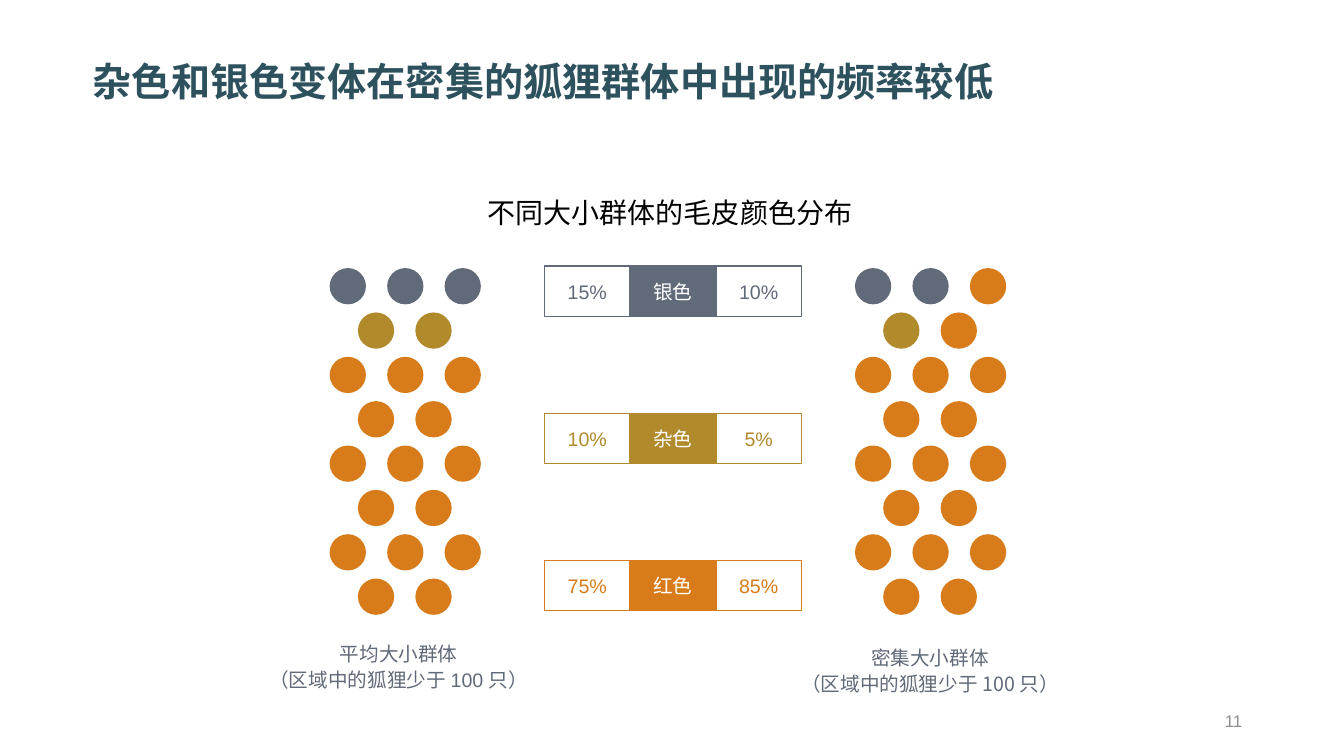
import pptx
import pptx.util
import pptx.dml.color
import pptx.enum.shapes
import pptx.enum.text

# Content
TITLE = "杂色和银色变体在密集的狐狸群体中出现的频率较低"
HEAD = "不同大小群体的毛皮颜色分布"
NUMBER = "11"
BARS = [  # coat, average share, label, dense share
    ("silver", "15%", "银色", "10%"),
    ("mixed", "10%", "杂色", "5%"),
    ("red", "75%", "红色", "85%"),
]
ROWS = (3, 2) * 4  # dots in each row
PACKS = [  # left edge, coats of the first dots (the rest are red)
    (327, ["silver"] * 3 + ["mixed"] * 2),
    (848, ["silver"] * 2 + ["red", "mixed"]),
]
SANS, HAN = "Arial", "Noto Sans CJK SC"
NOTE = "（区域中的狐狸少于 100 只）"
NOTES = [  # text, box, font, anchor, left inset
    (["平均大小群体", NOTE], (224, 639, 353, 60), SANS, "TOP", 0),
    (["密集大小群体", NOTE], (746, 638, 353, 60), HAN, "MIDDLE", 10),
]
COLORS = {
    "silver": "616A78", "mixed": "B18A2C", "red": "D87C1B", "title": "2E515E",
    "black": "000000", "white": "FFFFFF", "gray": "8C8C8C",
}
SCALE = 9144  # EMU in one px, 100 px to the inch
KINDS = pptx.enum.shapes.MSO_SHAPE


def px(*sizes):
    return [pptx.util.Emu(size * SCALE) for size in sizes]


def rgb(name):
    return pptx.dml.color.RGBColor.from_string(COLORS[name])


def move(shape, box):
    shape.left, shape.top, shape.width, shape.height = px(*box)


def write(shape, lines, size=14, color="black", font=SANS, bold=False,
          align="CENTER", anchor="TOP", inset=(10, 5, 10, 5), lead=None, gap=0):
    frame = shape.text_frame
    frame.text = "\n".join(lines)
    frame.word_wrap = True
    frame.auto_size = pptx.enum.text.MSO_AUTO_SIZE.NONE
    frame.vertical_anchor = getattr(pptx.enum.text.MSO_ANCHOR, anchor)
    (frame.margin_left, frame.margin_top,
     frame.margin_right, frame.margin_bottom) = px(*inset)
    for para in frame.paragraphs:
        para.alignment = getattr(pptx.enum.text.PP_ALIGN, align)
        para.space_before = pptx.util.Pt(gap)
        if lead:
            para.line_spacing = lead
        for run in para.runs:
            run.font.size = pptx.util.Pt(size)
            run.font.bold = bold
            run.font.name = font
            run.font.color.rgb = rgb(color)
            east = run.font._element.makeelement(pptx.oxml.ns.qn("a:ea"), {"typeface": HAN})
            run.font._element.append(east)


def draw(group, kind, box, fill=None, line=None):
    shape = group.shapes.add_shape(kind, *px(*box))
    shape.shadow.inherit = False
    if fill:
        shape.fill.solid()
        shape.fill.fore_color.rgb = rgb(fill)
    else:
        shape.fill.background()
    if line:
        shape.line.color.rgb = rgb(line)
        shape.line.width = pptx.util.Pt(1)
    else:
        shape.line.fill.background()
    return shape


def main():
    deck = pptx.Presentation()
    deck.slide_width, deck.slide_height = px(1333, 750)
    slide = deck.slides.add_slide(deck.slide_layouts[3])
    title, *bodies = slide.placeholders

    # Title and heading
    move(title, (92, 62, 1152, 96))
    write(title, [TITLE], size=28, color="title", font=HAN, bold=True,
          align="LEFT", inset=(0, 0, 0, 0), lead=0.9)
    head = slide.shapes.add_textbox(*px(292, 189, 745, 44))
    write(head, [HEAD], size=20)

    # Dot packs: rows of three and two, the short rows shifted by half a step
    for left, first in PACKS:
        group = slide.shapes.add_group_shape()
        coats = iter(first + ["red"] * (sum(ROWS) - len(first)))
        for row, count in enumerate(ROWS):
            for col in range(count):
                x = left + 57 * col + 28 * (row % 2)
                draw(group, KINDS.OVAL, (x, 266 + 44 * row, 36, 36), fill=next(coats))

    # Bars of three cells, the middle one filled
    for row, (coat, *cells) in enumerate(BARS):
        group = slide.shapes.add_group_shape()
        for col, text in enumerate(cells):
            mid = col == 1
            cell = draw(group, KINDS.RECTANGLE, (540 + 85 * col, 264 + 146 * row, 85, 50),
                        fill=coat if mid else None, line=coat)
            write(cell, [text], color="white" if mid else coat, anchor="MIDDLE")

    # Captions without bullets
    for body, (lines, box, font, anchor, inset) in zip(bodies, NOTES):
        move(body, box)
        write(body, lines, color="silver", font=font, anchor=anchor,
              inset=(inset, 8, 10, 5), lead=0.5, gap=10)
        for para in body.text_frame.paragraphs:
            props = para._p.get_or_add_pPr()
            props.set("marL", "0")
            props.set("indent", "0")
            props.append(props.makeelement(pptx.oxml.ns.qn("a:buNone"), {}))

    # Page number
    page = slide.shapes.add_textbox(*px(942, 695, 300, 40))
    write(page, [NUMBER], size=12, color="gray", align="RIGHT", anchor="MIDDLE")

    deck.save("out.pptx")


if __name__ == "__main__":
    main()
